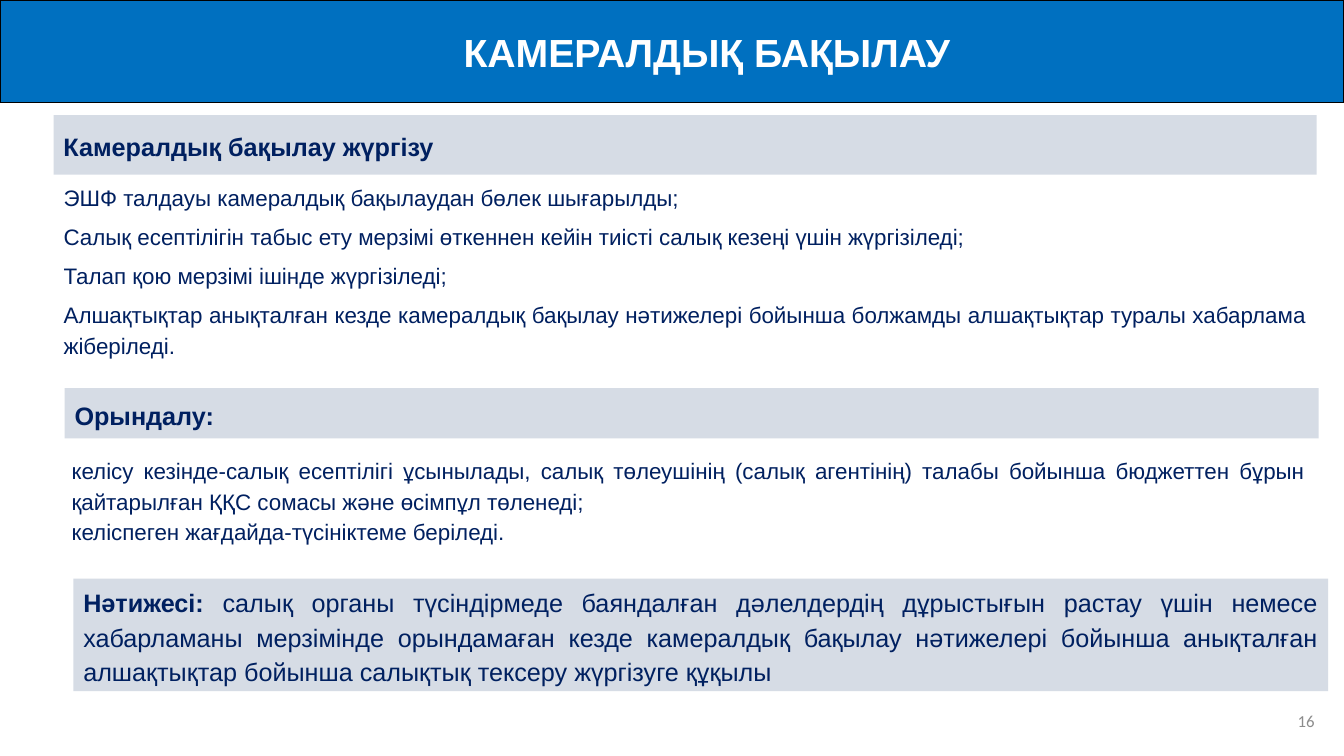
from dataclasses import dataclass

from pptx import Presentation
from pptx import util as u
from pptx.dml.color import RGBColor
from pptx.enum import shapes, text
from pptx.oxml.ns import qn


@dataclass(frozen=True)
class Theme:
    font: str = "Arial"
    number_font: str = "Calibri"
    header_fill: RGBColor = RGBColor(0x00, 0x70, 0xC0)
    header_line: RGBColor = RGBColor(0x00, 0x00, 0x00)
    header_text: RGBColor = RGBColor(0xFF, 0xFF, 0xFF)
    band_fill: RGBColor = RGBColor(0xD6, 0xDC, 0xE5)
    body_text: RGBColor = RGBColor(0x00, 0x20, 0x60)
    number_text: RGBColor = RGBColor(0x8C, 0x8C, 0x8C)
    title_size: int = 28
    band_size: int = 18
    list_size: int = 16
    number_size: int = 12
    line_spacing: float = 1.14
    paragraph_gap: int = 6


THEME = Theme()

TITLE = "КАМЕРАЛДЫҚ БАҚЫЛАУ"
CONTROL_HEADING = "Камералдық бақылау жүргізу"
CONTROL_RULES = [
    "ЭШФ талдауы камералдық бақылаудан бөлек шығарылды;",
    "Салық есептілігін табыс ету мерзімі өткеннен кейін тиісті салық кезеңі үшін жүргізіледі;",
    "Талап қою мерзімі ішінде жүргізіледі;",
    "Алшақтықтар анықталған кезде камералдық бақылау нәтижелері бойынша болжамды "
    "алшақтықтар туралы хабарлама жіберіледі.",
]
EXECUTION_HEADING = "Орындалу:"
EXECUTION_RULES = [
    "келісу кезінде-салық есептілігі ұсынылады, салық төлеушінің (салық агентінің) талабы "
    "бойынша бюджеттен бұрын қайтарылған ҚҚС сомасы және өсімпұл төленеді;",
    "келіспеген жағдайда-түсініктеме беріледі.",
]
RESULT_LABEL = "Нәтижесі: "
RESULT_TEXT = (
    "салық органы түсіндірмеде баяндалған дәлелдердің дұрыстығын растау үшін немесе "
    "хабарламаны мерзімінде орындамаған кезде камералдық бақылау нәтижелері бойынша "
    "анықталған алшақтықтар бойынша салықтық тексеру жүргізуге құқылы"
)


def place(shape, left, top, width, height):
    shape.left, shape.top = u.Cm(left), u.Cm(top)
    shape.width, shape.height = u.Cm(width), u.Cm(height)


def prepare_frame(shape, anchor):
    frame = shape.text_frame
    frame.word_wrap = True
    frame.auto_size = text.MSO_AUTO_SIZE.NONE
    frame.vertical_anchor = anchor
    return frame


def add_run(paragraph, words, size, color, bold=False, font=THEME.font):
    run = paragraph.add_run()
    run.text = words
    run.font.name = font
    run.font.size = u.Pt(size)
    run.font.bold = bold
    run.font.color.rgb = color


def set_indent(paragraph, left):
    properties = paragraph._p.get_or_add_pPr()
    properties.set("marL", str(u.Cm(left)))
    properties.set("indent", "0")
    return properties


def format_title(title):
    place(title, 0, 0, 33.87, 2.59)
    title.fill.solid()
    title.fill.fore_color.rgb = THEME.header_fill
    title.line.color.rgb = THEME.header_line
    title.line.width = u.Pt(1)
    paragraph = prepare_frame(title, text.MSO_ANCHOR.MIDDLE).paragraphs[0]
    set_indent(paragraph, 1.75)
    paragraph.alignment = text.PP_ALIGN.CENTER
    add_run(paragraph, TITLE, THEME.title_size, THEME.header_text, bold=True)


def fill_list(body, box, items, gap):
    place(body, *box)
    frame = prepare_frame(body, text.MSO_ANCHOR.TOP)
    for index, item in enumerate(items):
        paragraph = frame.add_paragraph() if index else frame.paragraphs[0]
        properties = set_indent(paragraph, 0)
        properties.append(properties.makeelement(qn("a:buNone"), {}))
        paragraph.alignment = text.PP_ALIGN.JUSTIFY
        paragraph.line_spacing = THEME.line_spacing
        paragraph.space_before = u.Pt(gap if index else 0)
        add_run(paragraph, item, THEME.list_size, THEME.body_text)


def add_band(slide, box, label, detail=""):
    band = slide.shapes.add_shape(shapes.MSO_SHAPE.RECTANGLE, *map(u.Cm, box))
    band.shadow.inherit = False
    band.fill.solid()
    band.fill.fore_color.rgb = THEME.band_fill
    band.line.fill.background()
    paragraph = prepare_frame(band, text.MSO_ANCHOR.MIDDLE).paragraphs[0]
    paragraph.alignment = text.PP_ALIGN.JUSTIFY
    paragraph.line_spacing = THEME.line_spacing
    add_run(paragraph, label, THEME.band_size, THEME.body_text, bold=True)
    if detail:
        add_run(paragraph, detail, THEME.band_size, THEME.body_text)


def add_page_number(slide, number):
    box = slide.shapes.add_textbox(*map(u.Cm, (25.76, 17.65, 7.62, 1.02)))
    paragraph = prepare_frame(box, text.MSO_ANCHOR.MIDDLE).paragraphs[0]
    paragraph.alignment = text.PP_ALIGN.RIGHT
    add_run(paragraph, number, THEME.number_size, THEME.number_text, font=THEME.number_font)


def main():
    presentation = Presentation()
    presentation.slide_width, presentation.slide_height = u.Cm(33.87), u.Cm(19.05)

    # Title and two lists come from the two-content layout
    slide = presentation.slides.add_slide(presentation.slide_layouts[3])
    title, control_list, execution_list = slide.placeholders
    format_title(title)

    # How the control is carried out
    add_band(slide, (1.35, 2.9, 31.83, 1.5), CONTROL_HEADING)
    fill_list(control_list, (1.35, 4.42, 31.83, 5.79), CONTROL_RULES, THEME.paragraph_gap)

    # How the notice is executed
    add_band(slide, (1.63, 9.78, 31.6, 1.27), EXECUTION_HEADING)
    fill_list(execution_list, (1.55, 11.3, 31.6, 2.57), EXECUTION_RULES, 0)

    # Result and page number
    add_band(slide, (1.85, 14.58, 31.62, 2.84), RESULT_LABEL, RESULT_TEXT)
    add_page_number(slide, "16")

    presentation.save("out.pptx")


if __name__ == "__main__":
    main()
